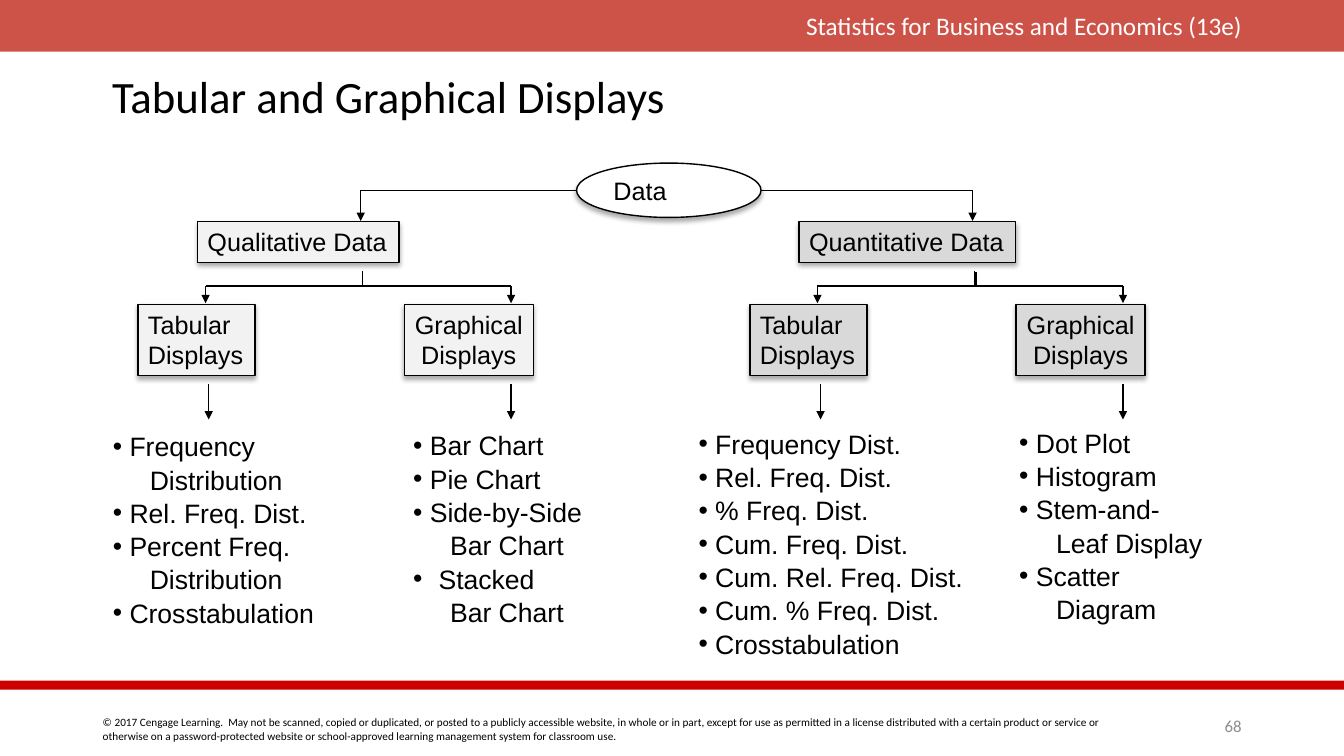
from dataclasses import dataclass

from lxml.etree import SubElement
from pptx import Presentation
from pptx.dml.color import RGBColor
from pptx.enum.shapes import MSO_CONNECTOR, MSO_SHAPE
from pptx.enum.text import MSO_ANCHOR, MSO_AUTO_SIZE, PP_ALIGN
from pptx.oxml.ns import qn
from pptx.util import Cm, Pt


@dataclass(frozen=True)
class Theme:
    heading_font: str = "Calibri"
    diagram_font: str = "Arial"
    ink: str = "000000"
    paper: str = "FFFFFF"
    banner: str = "BF2317"
    rule: str = "CC0000"
    page: str = "8C8C8C"
    qualitative: str = "F2F2F2"
    quantitative: str = "D9D9D9"
    title_size: int = 32
    list_size: int = 19
    node_size: int = 18
    page_size: int = 12
    legal_size: int = 8


def apply(target, values):
    for name, value in values.items():
        setattr(target, name, value)


class DisplaySlide:
    def __init__(self, slide, theme):
        self.slide = slide
        self.theme = theme

    def add_words(self, paragraph, text, size, font, color=None):
        run = paragraph.add_run()
        run.text = text
        apply(run.font, {"name": font, "size": Pt(size), "bold": False})
        run.font.color.rgb = RGBColor.from_string(color or self.theme.ink)

    def place(self, shape, box):
        apply(shape, dict(zip(("left", "top", "width", "height"), map(Cm, box))))

    def effects(self, shape, blur=None, distance=0, angle=0, alpha=0):
        properties = shape._element.spPr
        for old in properties.findall(qn("a:effectLst")):
            properties.remove(old)
        effect_list = SubElement(properties, qn("a:effectLst"))
        if blur is None:
            return
        shadow = SubElement(effect_list, qn("a:outerShdw"), blurRad=str(Pt(blur)),
                            dist=str(Pt(distance)), dir=str(angle * 60000),
                            algn="tl", rotWithShape="0")
        color = SubElement(shadow, qn("a:srgbClr"), val=self.theme.ink)
        SubElement(color, qn("a:alpha"), val=str(alpha * 1000))

    def title(self, text, box):
        heading = self.slide.shapes.title
        self.place(heading, box)
        apply(heading.text_frame, {"word_wrap": True, "auto_size": MSO_AUTO_SIZE.NONE,
                                   "vertical_anchor": MSO_ANCHOR.MIDDLE})
        paragraph = heading.text_frame.paragraphs[0]
        apply(paragraph, {"alignment": PP_ALIGN.LEFT, "line_spacing": 0.9})
        self.add_words(paragraph, text, self.theme.title_size, self.theme.heading_font)

    def bullets(self, index, box, entries):
        body = self.slide.placeholders[index]
        self.place(body, box)
        frame = body.text_frame
        apply(frame, {"word_wrap": True, "auto_size": MSO_AUTO_SIZE.NONE,
                      "vertical_anchor": MSO_ANCHOR.MIDDLE})
        lines = []
        for entry in entries:
            first, *rest = entry.split("|")
            lines.append((first, True))
            lines += [(line, False) for line in rest]
        for number, (text, bulleted) in enumerate(lines):
            paragraph = frame.add_paragraph() if number else frame.paragraphs[0]
            properties = paragraph._p.get_or_add_pPr()
            margin = 0.93
            if bulleted:
                margin = 0.64 if text == "Stacked" else 0.42
                SubElement(properties, qn("a:buFont"), typeface=self.theme.diagram_font)
                SubElement(properties, qn("a:buChar"), char="•")
            else:
                SubElement(properties, qn("a:buNone"))
            properties.set("marL", str(Cm(margin)))
            properties.set("indent", str(-Cm(margin) if bulleted else 0))
            apply(paragraph, {"alignment": PP_ALIGN.LEFT, "line_spacing": 1.0,
                              "space_before": Pt(0), "space_after": Pt(1)})
            self.add_words(paragraph, text, self.theme.list_size, self.theme.diagram_font)

    def label(self, text, box, size, color, align=PP_ALIGN.LEFT, anchor=MSO_ANCHOR.TOP):
        frame = self.slide.shapes.add_textbox(*map(Cm, box)).text_frame
        apply(frame, {"word_wrap": True, "vertical_anchor": anchor})
        frame.paragraphs[0].alignment = align
        self.add_words(frame.paragraphs[0], text, size, self.theme.heading_font, color)

    def band(self, box, color, opacity=100):
        strip = self.slide.shapes.add_shape(MSO_SHAPE.RECTANGLE, *map(Cm, box))
        strip.shadow.inherit = False
        strip.fill.solid()
        strip.fill.fore_color.rgb = RGBColor.from_string(color)
        strip.line.fill.background()
        if opacity < 100:
            fill = strip._element.spPr.find(qn("a:solidFill"))
            SubElement(fill[0], qn("a:alpha"), val=str(opacity * 1000))

    def node(self, text, box, color, preset=MSO_SHAPE.RECTANGLE,
             align=PP_ALIGN.LEFT, anchor=MSO_ANCHOR.TOP):
        node = self.slide.shapes.add_shape(preset, *map(Cm, box))
        node.fill.solid()
        node.fill.fore_color.rgb = RGBColor.from_string(color)
        node.line.color.rgb = RGBColor.from_string(self.theme.ink)
        node.line.width = Pt(1)
        self.effects(node, blur=3.5, distance=2.2, angle=90, alpha=32)
        frame = node.text_frame
        apply(frame, {"word_wrap": False, "vertical_anchor": anchor})
        for number, line in enumerate(text.split("|")):
            paragraph = frame.add_paragraph() if number else frame.paragraphs[0]
            paragraph.alignment = align
            self.add_words(paragraph, line, self.theme.node_size, self.theme.diagram_font)

    def link(self, start, end, arrow=False, **shadow):
        link = self.slide.shapes.add_connector(MSO_CONNECTOR.STRAIGHT,
                                               *map(Cm, (*start, *end)))
        link.line.color.rgb = RGBColor.from_string(self.theme.ink)
        link.line.width = Pt(1)
        if arrow:
            outline = link._element.spPr.find(qn("a:ln"))
            SubElement(outline, qn("a:tailEnd"), type="triangle")
        self.effects(link, **shadow)

    def half(self, name, parent_left, parent_width, shift, color, root_side, **stem_shadow):
        trunk, stem, bar_y = 9.09 + shift, 9.14 + shift, 7.21
        self.link((root_side, 4.8), (trunk, 4.8))
        self.link((trunk, 4.8), (trunk, 5.57), arrow=True)
        self.node(name, (parent_left, 5.59, parent_width, 1.02), color)
        self.link((stem, 6.83), (stem, bar_y), **stem_shadow)
        branches = (("Tabular|Displays", 3.48, 2.95, 5.18, 5.26, PP_ALIGN.LEFT),
                    ("Graphical|Displays", 10.19, 3.25, 12.88, 12.88, PP_ALIGN.CENTER))
        for text, left, width, drop, exit_x, align in branches:
            drop, exit_x = drop + shift, exit_x + shift
            self.link((stem, bar_y), (drop, bar_y))
            self.link((drop, bar_y), (drop, 7.64), arrow=True)
            self.node(text, (left + shift, 7.67, width, 1.8), color, align=align)
            self.link((exit_x, 9.68), (exit_x, 10.57), arrow=True)


LISTS = (
    ((2.59, 10.29, 7.47, 6.1),
     ("Frequency|Distribution", "Rel. Freq. Dist.", "Percent Freq.|Distribution",
      "Crosstabulation")),
    ((10.16, 10.69, 5.74, 5.26),
     ("Bar Chart", "Pie Chart", "Side-by-Side|Bar Chart", "Stacked|Bar Chart")),
    ((17.35, 10.29, 8.15, 6.81),
     ("Frequency Dist.", "Rel. Freq. Dist.", "% Freq. Dist.", "Cum. Freq. Dist.",
      "Cum. Rel. Freq. Dist.", "Cum. % Freq. Dist.", "Crosstabulation")),
    ((25.43, 10.01, 6.68, 6.48),
     ("Dot Plot", "Histogram", "Stem-and-|Leaf Display", "Scatter|Diagram")),
)
COPYRIGHT = ("© 2017 Cengage Learning.  May not be scanned, copied or duplicated, or posted "
             "to a publicly accessible website, in whole or in part, except for use as "
             "permitted in a license distributed with a certain product or service or "
             "otherwise on a password-protected website or school-approved learning "
             "management system for classroom use.")


def main():
    deck = Presentation()
    apply(deck, {"slide_width": Cm(33.87), "slide_height": Cm(19.05)})
    theme = Theme()
    page = DisplaySlide(deck.slides.add_slide(deck.slide_layouts[4]), theme)

    page.band((0, 0, 33.87, 1.3), theme.banner, opacity=78)
    page.label("Statistics for Business and Economics (13e)", (19.46, 0.13, 12.09, 1.02),
               theme.node_size, theme.paper, PP_ALIGN.RIGHT)
    page.band((0, 17.15, 33.87, 0.23), theme.rule)
    page.label(COPYRIGHT, (2.34, 17.91, 26.24, 0.94), theme.legal_size, theme.ink)
    page.label("68", (29.79, 17.91, 1.75, 0.76), theme.page_size, theme.page,
               PP_ALIGN.RIGHT, MSO_ANCHOR.MIDDLE)

    page.title("Tabular and Graphical Displays", (2.57, 1.37, 28.73, 2.26))
    for index, (box, entries) in enumerate(LISTS, start=1):
        page.bullets(index, box, entries)

    page.half("Qualitative Data", 4.98, 5.08, 0, theme.qualitative, 14.53)
    page.half("Quantitative Data", 20.14, 5.46, 15.42, theme.quantitative, 19.18,
              blur=0, distance=1.4, angle=45, alpha=100)
    page.node("Data", (14.53, 4.11, 4.65, 1.37), theme.paper, MSO_SHAPE.OVAL,
              anchor=MSO_ANCHOR.MIDDLE)
    deck.save("out.pptx")


if __name__ == "__main__":
    main()
